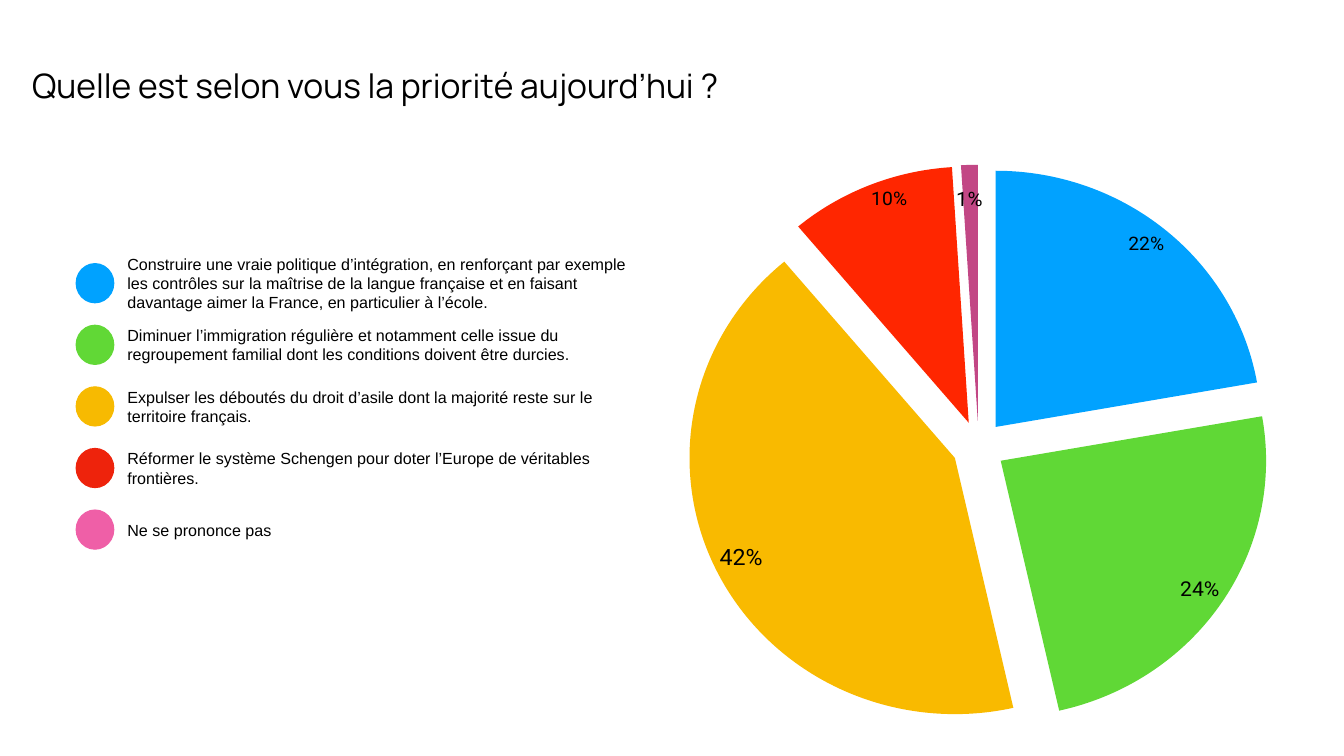
from dataclasses import dataclass

from pptx import Presentation
from pptx.chart.data import CategoryChartData
from pptx.dml.color import RGBColor
from pptx.enum.chart import XL_CHART_TYPE as ChartType, XL_LABEL_POSITION as LabelPosition
from pptx.enum.shapes import MSO_SHAPE as ShapeKind
from pptx.enum.text import MSO_ANCHOR as Anchor
from pptx.oxml import parse_xml
from pptx.oxml.ns import nsdecls, qn
from pptx.util import Pt


@dataclass(frozen=True)
class Theme:
    """Colours, fonts and type sizes of the slide."""
    text: str = "000000"
    slices: tuple = ("01A2FF", "60D836", "F9BA00", "FF2600", "C24785")
    markers: tuple = ("00A2FF", "61D836", "F7BA01", "EE230C", "EF5FA7")
    title_font: str = "Manrope"
    legend_font: str = "Arial"
    label_font: str = "Roboto"
    title_size: float = 48
    legend_size: float = 23
    label_sizes: tuple = (28.2, 31, 34, 28.2, 30)


TITLE = "Quelle est selon vous la priorité aujourd’hui\u00a0?"
ANSWERS = (
    ("Construire une vraie politique d’intégration, en renforçant par exemple les contrôles sur "
     "la maîtrise de la langue française et en faisant davantage aimer la France, en particulier "
     "à l’école.", 22),
    ("Diminuer l’immigration régulière et notamment celle issue du regroupement familial dont "
     "les conditions doivent être durcies.", 24),
    ("Expulser les déboutés du droit d’asile dont la majorité reste sur le territoire français.", 42),
    ("Réformer le système Schengen pour doter l’Europe de véritables frontières.", 10),
    ("Ne se prononce pas", 1),
)


class SlideBuilder:
    """Draws each kind of element on the current slide in the theme's style."""

    def __init__(self, slide, theme):
        self.slide = slide
        self.theme = theme

    def style_font(self, font, name, size):
        """Set the typeface, size and text colour of a font."""
        font.name = name
        font.size = Pt(size)
        font.color.rgb = RGBColor.from_string(self.theme.text)

    def add_text(self, text, left, top, width, height, font_name, size, wrap=True):
        """Add a vertically centred text box."""
        box = self.slide.shapes.add_textbox(Pt(left), Pt(top), Pt(width), Pt(height))
        frame = box.text_frame
        frame.margin_left = frame.margin_right = frame.margin_top = frame.margin_bottom = Pt(4)
        frame.word_wrap = wrap
        frame.vertical_anchor = Anchor.MIDDLE
        frame.text = text
        self.style_font(frame.paragraphs[0].runs[0].font, font_name, size)

    def add_marker(self, left, top, width, height, color):
        """Add a legend dot."""
        shape = self.slide.shapes.add_shape(
            ShapeKind.OVAL, Pt(left), Pt(top), Pt(width), Pt(height))
        shape.shadow.inherit = False
        shape.fill.solid()
        shape.fill.fore_color.rgb = RGBColor.from_string(color)
        shape.line.fill.background()

    def add_pie(self, values, left, top, width, height, explosion):
        """Add an exploded pie chart with percentage labels."""
        data = CategoryChartData()
        data.categories = [str(number) for number in range(1, len(values) + 1)]
        data.add_series("Series 1", values)
        chart = self.slide.shapes.add_chart(
            ChartType.PIE, Pt(left), Pt(top), Pt(width), Pt(height), data).chart
        chart.has_legend = False
        chart.has_title = False
        self.style_font(chart.font, self.theme.legend_font, 10)
        plot = chart.plots[0]
        plot.vary_by_categories = True
        series = plot.series[0]
        for index, (color, size) in enumerate(zip(self.theme.slices, self.theme.label_sizes)):
            point = series.points[index]
            point.format.fill.solid()
            point.format.fill.fore_color.rgb = RGBColor.from_string(color)
            point.format.line.fill.background()
            self.style_font(point.data_label.font, self.theme.label_font, size)
            point.data_label.position = LabelPosition.INSIDE_END
        self.show_percentages(series)
        self.explode(series, explosion)
        self.fill_frame(chart)

    def show_percentages(self, series):
        """Make every point label show its share instead of its value."""
        for label in series._element.iter(qn("c:dLbl")):
            label.find(qn("c:showVal")).set("val", "0")
            label.find(qn("c:showPercent")).set("val", "1")

    def explode(self, series, explosion):
        """Move each slice away from the centre."""
        for point in series._element.findall(qn("c:dPt")):
            point.find(qn("c:spPr")).addprevious(
                parse_xml(f'<c:explosion {nsdecls("c")} val="{explosion}"/>'))

    def fill_frame(self, chart):
        """Stretch the plot area over nearly the whole chart."""
        area = chart._chartSpace.find(qn("c:chart")).find(qn("c:plotArea"))
        for layout in area.findall(qn("c:layout")):
            area.remove(layout)
        area.insert(0, parse_xml(
            f'<c:layout {nsdecls("c")}><c:manualLayout><c:layoutTarget val="inner"/>'
            '<c:xMode val="edge"/><c:yMode val="edge"/><c:x val="0.005"/><c:y val="0.005"/>'
            '<c:w val="0.99"/><c:h val="0.99"/></c:manualLayout></c:layout>'))


def main():
    """Build and save the survey slide."""
    presentation = Presentation()
    presentation.slide_width = Pt(1920)
    presentation.slide_height = Pt(1080)
    theme = Theme()
    builder = SlideBuilder(
        presentation.slides.add_slide(presentation.slide_layouts[6]), theme)

    builder.add_pie([value for _, value in ANSWERS], 985, 235.4, 823.7, 784.8, 10)
    builder.add_text(TITLE, 42, 84, 1102, 75, theme.title_font, theme.title_size, wrap=False)

    first_center, pitch = 404.6, 88
    marker_height, text_height = 57.6, 92
    for row, ((answer, _), color) in enumerate(zip(ANSWERS, theme.markers)):
        center = first_center + row * pitch
        builder.add_marker(108, center - marker_height / 2, 55.4, marker_height, color)
        builder.add_text(answer, 178, center - text_height / 2, 739, text_height,
                         theme.legend_font, theme.legend_size)

    presentation.save("out.pptx")


if __name__ == "__main__":
    main()
